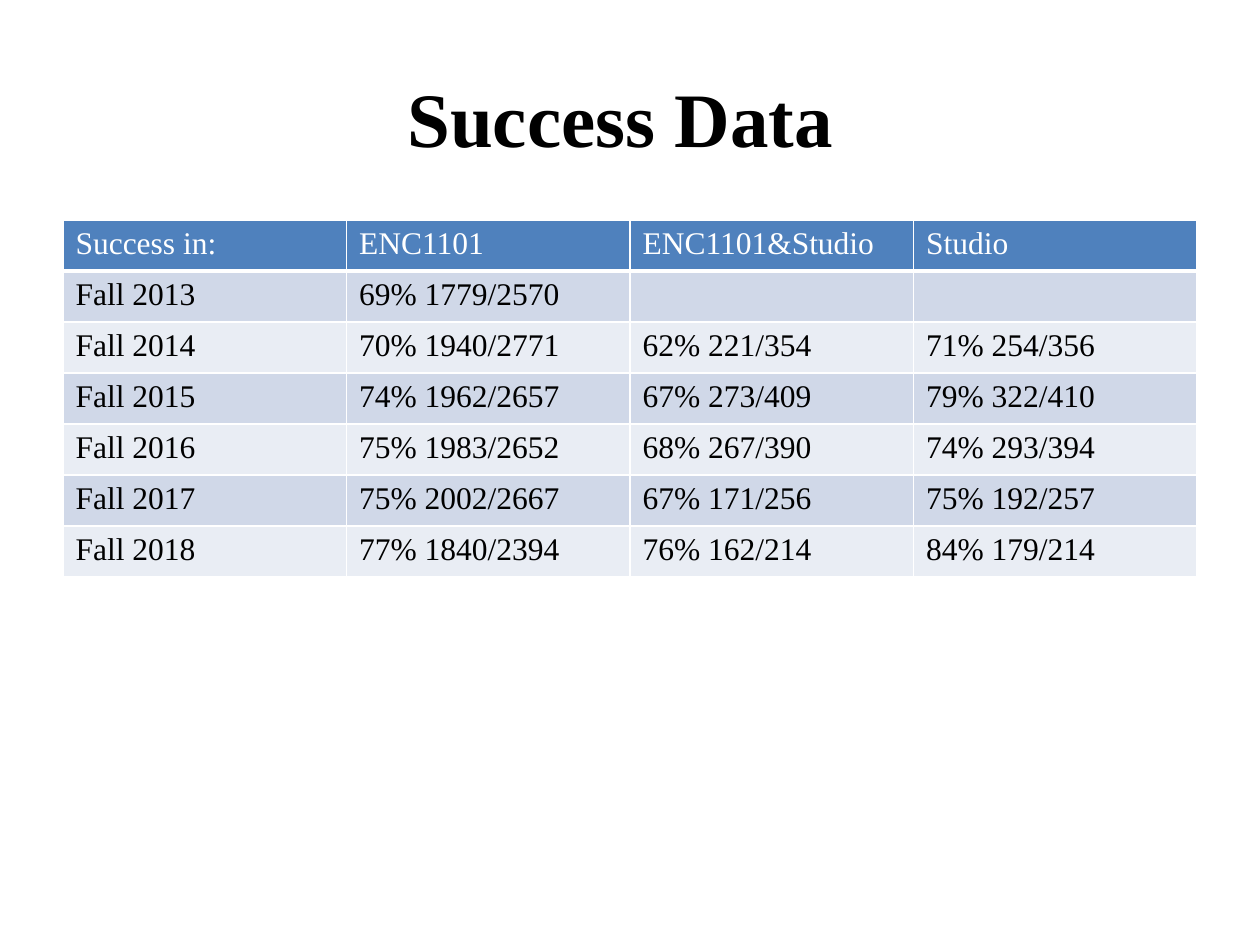
from lxml import etree
from pptx import Presentation
from pptx.dml.color import RGBColor
from pptx.enum.text import MSO_ANCHOR, PP_ALIGN
from pptx.oxml.ns import qn
from pptx.util import Pt

CENTER = PP_ALIGN.CENTER
MIDDLE = MSO_ANCHOR.MIDDLE

# Content
TITLE = "Success Data "
ROWS = [
    ("Success in:", "ENC1101", "ENC1101&Studio", "Studio"),
    ("Fall 2013", "69% 1779/2570", "", ""),
    ("Fall 2014", "70% 1940/2771", "62% 221/354", "71% 254/356"),
    ("Fall 2015", "74% 1962/2657", "67% 273/409", "79% 322/410"),
    ("Fall 2016", "75% 1983/2652", "68% 267/390", "74% 293/394"),
    ("Fall 2017", "75% 2002/2667", "67% 171/256", "75% 192/257"),
    ("Fall 2018", "77% 1840/2394", "76% 162/214", "84% 179/214"),
]

# Layout in px, 126 to the inch
SCALE = 914400 / 126
SLIDE_SIZE = (1260, 945)
TITLE_BOX = (63, 38, 1134, 158)
TABLE_LEFT, TABLE_TOP, TABLE_WIDTH = 63, 220, 1134
ROW_HEIGHT = 51

FONT = "Times New Roman"
BLACK, WHITE = "000000", "FFFFFF"
HEADER_FILL = "4F81BD"
BAND_FILLS = ("D0D8E8", "E9EDF4")


def px(value):
    return round(value * SCALE)


def color(value):
    return RGBColor.from_string(value)


def set_font(paragraph, size, text_color, bold=False):
    font = paragraph.font
    font.name, font.size, font.bold = FONT, Pt(size), bold
    font.color.rgb = color(text_color)


def set_borders(cell, line_color, widths):
    properties = cell._tc.get_or_add_tcPr()
    for index, (side, width) in enumerate(widths.items()):
        line = etree.Element(qn(f"a:ln{side}"), w=str(Pt(width)))
        fill = etree.SubElement(line, qn("a:solidFill"))
        etree.SubElement(fill, qn("a:srgbClr"), val=line_color)
        properties.insert(index, line)  # borders precede the cell fill


presentation = Presentation()
presentation.slide_width, presentation.slide_height = map(px, SLIDE_SIZE)
slide = presentation.slides.add_slide(presentation.slide_layouts[6])

# Title
title_frame = slide.shapes.add_textbox(*map(px, TITLE_BOX)).text_frame
title_frame.word_wrap = True
title_frame.vertical_anchor = MIDDLE
title = title_frame.paragraphs[0]
title.text = TITLE
title.alignment = CENTER
set_font(title, 44, BLACK, bold=True)

# Table of success rates
table = slide.shapes.add_table(
    len(ROWS), len(ROWS[0]), px(TABLE_LEFT), px(TABLE_TOP),
    px(TABLE_WIDTH), px(ROW_HEIGHT * len(ROWS))).table
for row_index, row in enumerate(ROWS):
    is_header = row_index == 0
    row_fill = HEADER_FILL if is_header else BAND_FILLS[(row_index - 1) % 2]
    widths = {"L": 1, "R": 1, "T": 3 if row_index == 1 else 1,
              "B": 3 if is_header else 1}
    for column_index, text in enumerate(row):
        cell = table.cell(row_index, column_index)
        cell.text = text
        cell.fill.solid()
        cell.fill.fore_color.rgb = color(row_fill)
        set_font(cell.text_frame.paragraphs[0], 18, WHITE if is_header else BLACK)
        set_borders(cell, WHITE, widths)

presentation.save("out.pptx")
